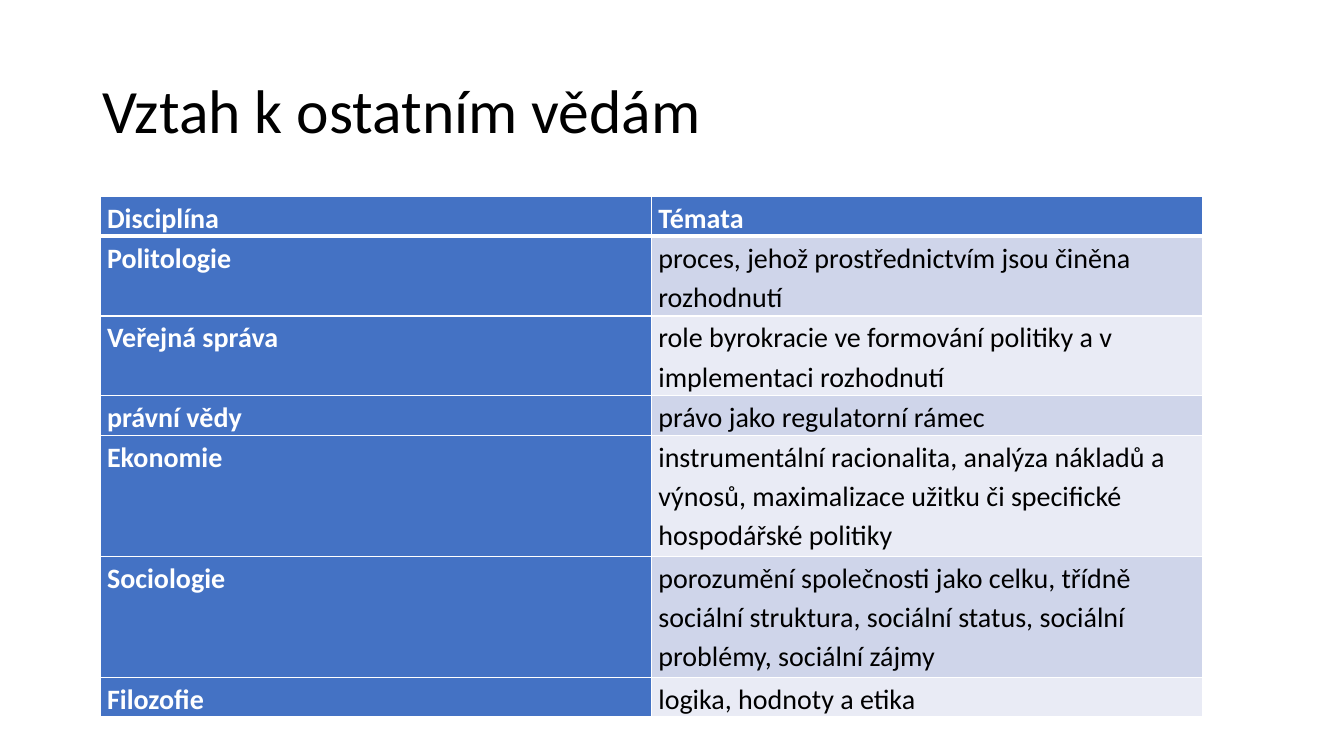
from pptx import Presentation
from pptx import util as u
from pptx.dml import color
from pptx.enum import text
from pptx.oxml import ns
from lxml import etree

FONT = "Calibri"
WHITE, BLACK, BLUE = "FFFFFF", "000000", "4472C4"
BANDS = ["CFD5EA", "E9EBF5"]
HEADER = ("Disciplína", "Témata")
DISCIPLINES = [
    ("Politologie", "proces, jehož prostřednictvím jsou činěna rozhodnutí"),
    ("Veřejná správa", "role byrokracie ve formování politiky a v implementaci rozhodnutí"),
    ("právní vědy", "právo jako regulatorní rámec"),
    ("Ekonomie", "instrumentální racionalita, analýza nákladů a výnosů, "
                 "maximalizace užitku či specifické hospodářské politiky"),
    ("Sociologie", "porozumění společnosti jako celku, třídně sociální struktura, "
                   "sociální status, sociální problémy, sociální zájmy"),
    ("Filozofie", "logika, hodnoty a etika"),
]
LINES_PER_ROW = [1, 2, 2, 1, 3, 3, 1]
ROW_HEIGHTS = {1: 27.6, 2: 57, 3: 86.4}


def rgb(value):
    return color.RGBColor.from_string(value)


def add_run(paragraph, wording, size, hue, bold=False):
    run = paragraph.add_run()
    run.text = wording
    run.font.name = FONT
    run.font.size = u.Pt(size)
    run.font.bold = bold
    run.font.color.rgb = rgb(hue)


def add_title(slide, wording):
    title = slide.shapes.title
    title.left, title.top = u.Pt(66), u.Pt(28.75)
    title.width, title.height = u.Pt(828), u.Pt(104.4)
    frame = title.text_frame
    frame.auto_size = text.MSO_AUTO_SIZE.NONE
    frame.vertical_anchor = text.MSO_ANCHOR.MIDDLE
    heading = frame.paragraphs[0]
    heading.alignment = text.PP_ALIGN.LEFT
    heading.line_spacing = 0.9
    add_run(heading, wording, 44, BLACK)


def set_borders(cell, top, bottom):
    properties = cell._tc.get_or_add_tcPr()
    for side, width in (("L", 1), ("R", 1), ("T", top), ("B", bottom)):
        line = etree.SubElement(properties, ns.qn(f"a:ln{side}"), w=str(u.Pt(width)))
        fill = etree.SubElement(line, ns.qn("a:solidFill"))
        etree.SubElement(fill, ns.qn("a:srgbClr"), val=WHITE)


def fill_cell(cell, wording, background, hue, bold, top, bottom):
    set_borders(cell, top, bottom)
    cell.fill.solid()
    cell.fill.fore_color.rgb = rgb(background)
    cell.margin_left = cell.margin_right = u.Pt(5)
    cell.margin_top = cell.margin_bottom = u.Pt(0)
    entry = cell.text_frame.paragraphs[0]
    entry.line_spacing = 1.15
    add_run(entry, wording, 20, hue, bold)


def add_discipline_table(slide):
    rows = [HEADER] + DISCIPLINES
    heights = [ROW_HEIGHTS[lines] for lines in LINES_PER_ROW]
    frame = slide.shapes.add_table(len(rows), 2, u.Pt(71.5), u.Pt(140.6),
                                   u.Pt(787.6), u.Pt(sum(heights)))
    table = frame.table
    for column in table.columns:
        column.width = u.Pt(393.8)
    for r, (row, height) in enumerate(zip(rows, heights)):
        table.rows[r].height = u.Pt(height)
        for c, wording in enumerate(row):
            strong = r == 0 or c == 0
            fill_cell(table.cell(r, c), wording,
                      background=BLUE if strong else BANDS[(r - 1) % 2],
                      hue=WHITE if strong else BLACK, bold=strong,
                      top=3 if r == 1 else 1, bottom=3 if r == 0 else 1)


def main():
    deck = Presentation()
    deck.slide_width, deck.slide_height = u.Pt(960), u.Pt(540)
    slide = deck.slides.add_slide(deck.slide_layouts[5])
    add_title(slide, "Vztah k ostatním vědám")
    add_discipline_table(slide)
    deck.save("out.pptx")


if __name__ == "__main__":
    main()
